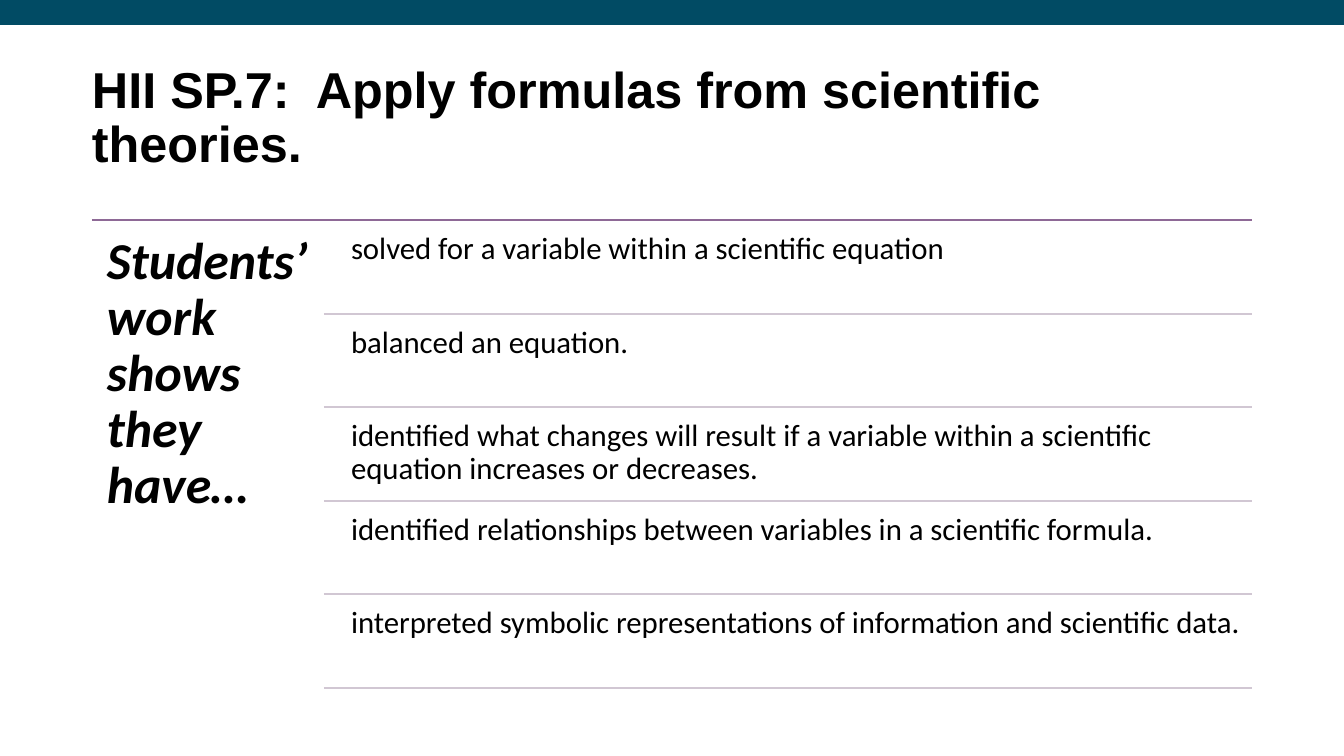
from lxml.etree import SubElement
from pptx import Presentation
from pptx.dml.color import RGBColor
from pptx.enum.shapes import MSO_CONNECTOR, MSO_SHAPE
from pptx.enum.text import MSO_ANCHOR, MSO_AUTO_SIZE, PP_ALIGN
from pptx.oxml.ns import qn
from pptx.util import Emu, Pt

PX_PER_INCH = 100.8
SLIDE_WIDTH, SLIDE_HEIGHT = 1344, 756

TITLE = "HII SP.7:  Apply formulas from scientific theories."
LEAD_IN = "Students’ work shows they have…"
SKILLS = [
    "solved for a variable within a scientific equation",
    "balanced an equation.",
    "identified what changes will result if a variable within a scientific "
    "equation increases or decreases.",
    "identified relationships between variables in a scientific formula.",
    "interpreted symbolic representations of information and scientific data.",
]


def px(length):
    return Emu(round(length * 914400 / PX_PER_INCH))


def color(hex_string):
    return RGBColor.from_string(hex_string)


class SkillSlide:
    heading_font = "Arial"
    body_font = "Calibri"
    ink = "000000"
    band_fill = "014B64"
    top_rule = "8E6996"
    row_rule = "D1C7D3"

    def __init__(self, presentation):
        self.slide = presentation.slides.add_slide(presentation.slide_layouts[5])

    def band(self, left, top, width, height):
        band = self.slide.shapes.add_shape(
            MSO_SHAPE.RECTANGLE, px(left), px(top), px(width), px(height))
        band.shadow.inherit = False
        band.fill.solid()
        band.fill.fore_color.rgb = color(self.band_fill)
        band.line.fill.background()

    def set_words(self, box, words, size, font, inset, anchor, bold=False, italic=False):
        frame = box.text_frame
        frame.text = words
        frame.word_wrap = True
        frame.auto_size = MSO_AUTO_SIZE.NONE
        frame.vertical_anchor = anchor
        frame.margin_left = frame.margin_right = px(inset)
        frame.margin_top = frame.margin_bottom = px(inset)
        paragraph = frame.paragraphs[0]
        paragraph.alignment = PP_ALIGN.LEFT
        paragraph.line_spacing = 0.9
        paragraph.font.name = font
        paragraph.font.size = Pt(size)
        paragraph.font.bold = bold
        paragraph.font.italic = italic
        paragraph.font.color.rgb = color(self.ink)

    def title(self, words, left, top, width, height):
        title = self.slide.shapes.title
        title.left, title.top = px(left), px(top)
        title.width, title.height = px(width), px(height)
        self.set_words(title, words, 36, self.heading_font, 0, MSO_ANCHOR.MIDDLE, bold=True)

    def text(self, words, left, top, width, height, size, inset, **style):
        box = self.slide.shapes.add_textbox(px(left), px(top), px(width), px(height))
        self.set_words(box, words, size, self.body_font, inset, MSO_ANCHOR.TOP, **style)

    def rule(self, left, right, y, line_color):
        rule = self.slide.shapes.add_connector(
            MSO_CONNECTOR.STRAIGHT, px(left), px(y), px(right), px(y))
        rule.line.color.rgb = color(line_color)
        rule.line.width = Pt(1)
        SubElement(rule._element.spPr, qn("a:effectLst"))


def main():
    presentation = Presentation()
    presentation.slide_width = px(SLIDE_WIDTH)
    presentation.slide_height = px(SLIDE_HEIGHT)
    page = SkillSlide(presentation)

    # Header
    left, right = 92, 1252
    page.band(0, 0, SLIDE_WIDTH, 25)
    page.title(TITLE, left, 46, right - left, 146)

    # Lead-in column
    list_top, list_height = 220, 468
    page.rule(left, right, list_top, page.top_rule)
    page.text(LEAD_IN, left, list_top, 234, list_height, 37, 15, bold=True, italic=True)

    # Skills, each with a rule below
    rule_left, skill_left = 324, 342
    row_height = list_height / len(SKILLS)
    for row, skill in enumerate(SKILLS):
        row_top = round(list_top + row * row_height)
        row_bottom = round(list_top + (row + 1) * row_height)
        page.text(skill, skill_left, row_top + 4, right - skill_left, 89, 22, 9)
        page.rule(rule_left, right, row_bottom, page.row_rule)

    presentation.save("out.pptx")


if __name__ == "__main__":
    main()
